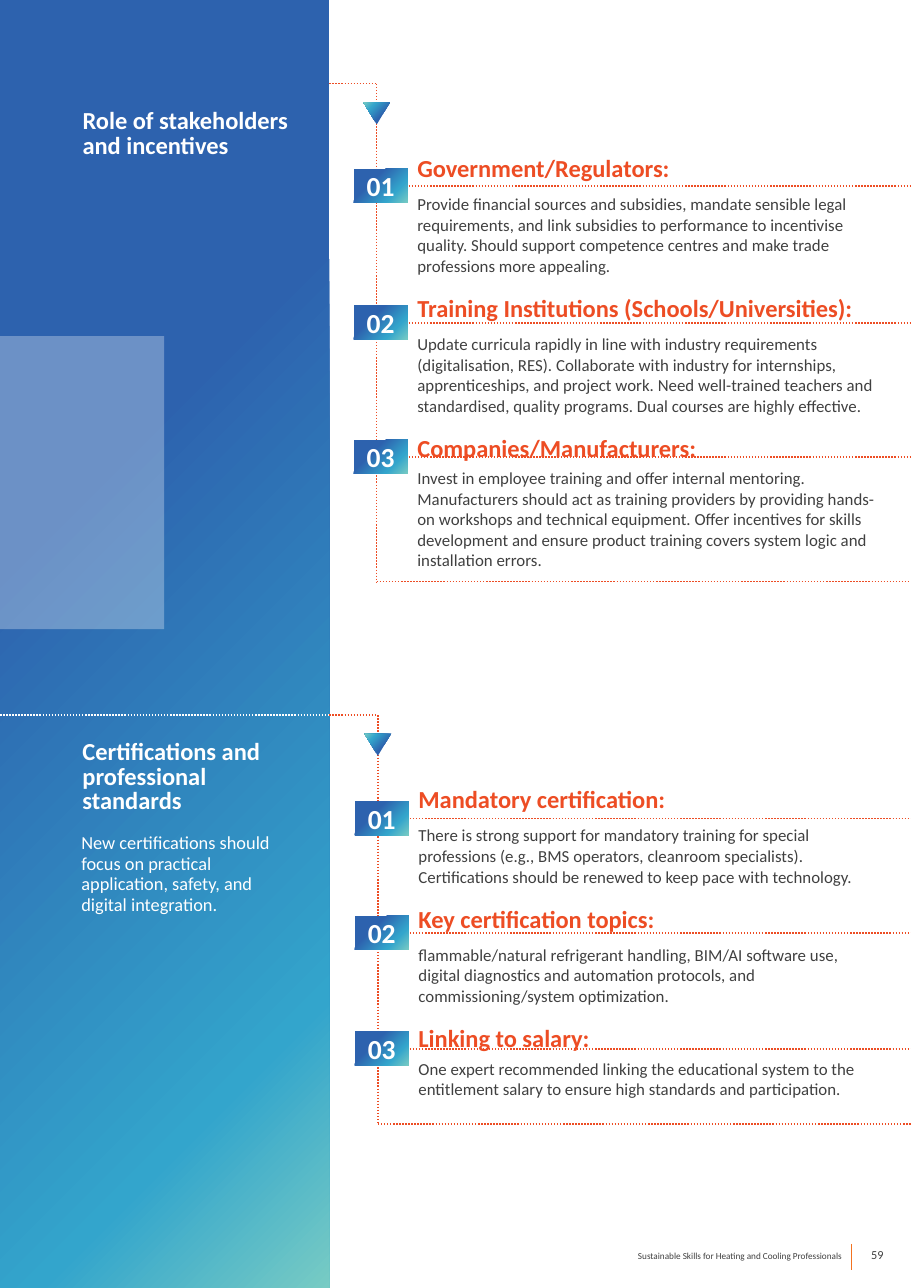
from copy import deepcopy

from pptx import Presentation
from pptx.dml.color import RGBColor
from pptx.enum.dml import MSO_LINE
from pptx.enum.shapes import MSO_CONNECTOR, MSO_SHAPE
from pptx.enum.text import MSO_ANCHOR, MSO_AUTO_SIZE, PP_ALIGN
from pptx.oxml.ns import qn
from pptx.oxml.xmlchemy import OxmlElement
from pptx.util import Pt

PX = 9144
PAGE_WIDTH, PAGE_HEIGHT = 827, 1169
SIDEBAR_WIDTH = 299
COLORS = {
    "blue": "2D62AE", "cyan": "33A5CC", "mint": "77CBC4", "white": "FFFFFF",
    "orange": "ED4D24", "amber": "F37321", "text": "404040",
}
SIDE_TITLE = {"size": 16, "bold": True, "color": "white", "line_spacing": Pt(16)}
SIDE_TEXT = {"size": 12, "color": "white", "line_spacing": Pt(13.4)}
HEADING = {"size": 16, "bold": True, "color": "orange", "line_spacing": Pt(13.4)}
BODY = {"size": 11, "color": "text", "line_spacing": Pt(13.4)}
BADGE = {"size": 18, "bold": True, "color": "white", "alignment": PP_ALIGN.CENTER}
FOOTER = {"size": 6, "color": "text", "alignment": PP_ALIGN.RIGHT}
NUMBER = {**FOOTER, "size": 8}

STAKEHOLDERS = [
    ("Government/Regulators:",
     "Provide financial sources and subsidies, mandate sensible legal requirements, "
     "and link subsidies to performance to incentivise quality. Should support "
     "competence centres and make trade professions more appealing."),
    ("Training Institutions (Schools/Universities):",
     "Update curricula rapidly in line with industry requirements (digitalisation, "
     "RES). Collaborate with industry for internships, apprenticeships, and project "
     "work. Need well-trained teachers and standardised, quality programs. Dual "
     "courses are highly effective."),
    ("Companies/Manufacturers:",
     "Invest in employee training and offer internal mentoring. Manufacturers should "
     "act as training providers by providing hands-on workshops and technical "
     "equipment. Offer incentives for skills development and ensure product training "
     "covers system logic and installation errors."),
]
CERTIFICATIONS = [
    ("Mandatory certification:",
     "There is strong support for mandatory training for special professions (e.g., "
     "BMS operators, cleanroom specialists). Certifications should be renewed to keep "
     "pace with technology."),
    ("Key certification topics:",
     "flammable/natural refrigerant handling, BIM/AI software use, digital diagnostics "
     "and automation protocols, and commissioning/system optimization."),
    ("Linking to salary:",
     "One expert recommended linking the educational system to the entitlement salary "
     "to ensure high standards and participation."),
]


def rgb(name):
    """Return the named colour."""
    return RGBColor.from_string(COLORS[name])


def scaled(*lengths):
    """Turn px into EMU."""
    return [length * PX for length in lengths]


def write(shape, paragraphs, anchor=MSO_ANCHOR.TOP):
    """Fill a shape with (text, format) paragraphs."""
    frame = shape.text_frame
    frame.word_wrap = True
    frame.auto_size = MSO_AUTO_SIZE.NONE
    frame.vertical_anchor = anchor
    for index, (text, style) in enumerate(paragraphs):
        para = frame.add_paragraph() if index else frame.paragraphs[0]
        values = {"alignment": PP_ALIGN.LEFT, **style}
        size, color = Pt(values.pop("size")), values.pop("color")
        span = para.add_run()
        span.text = text
        font = {"name": "Calibri", "size": size, "bold": values.pop("bold", False)}
        for name, value in font.items():
            setattr(span.font, name, value)
        span.font.color.rgb = rgb(color)
        for name, value in values.items():
            setattr(para, name, value)


def add_text(page, box, paragraphs, anchor=MSO_ANCHOR.TOP):
    """Add a text box."""
    write(page.shapes.add_textbox(*scaled(*box)), paragraphs, anchor)


def add_line(page, start, end, color="orange", width=1, dash=MSO_LINE.ROUND_DOT):
    """Add a straight line between two points."""
    line = page.shapes.add_connector(MSO_CONNECTOR.STRAIGHT, *scaled(*start, *end))
    line.line.color.rgb = rgb(color)
    for name, value in {"width": Pt(width), "dash_style": dash}.items():
        setattr(line.line, name, value)
    line.element.spPr.append(OxmlElement("a:effectLst"))


def add_gradient_shape(page, kind, box, middle=0.74):
    """Add a borderless shape with the diagonal blue to mint gradient."""
    shape = page.shapes.add_shape(kind, *scaled(*box))
    shape.shadow.inherit = False
    shape.line.fill.background()
    shape.fill.gradient()
    shape.fill.gradient_angle = 315
    stops = shape.element.spPr.find(".//" + qn("a:gsLst"))
    stops.append(deepcopy(stops[0]))
    ramp = zip(shape.fill.gradient_stops, (0.35, middle, 1), ("blue", "cyan", "mint"))
    for stop, position, color in ramp:
        stop.position = position
        stop.color.rgb = rgb(color)
    return shape


def build_sidebar(page, box):
    """Place the gradient sidebar, its emblem block and its texts."""
    left, top, width, height = box
    add_gradient_shape(page, MSO_SHAPE.RECTANGLE, box, 0.82)
    emblem = page.shapes.add_shape(
        MSO_SHAPE.RECTANGLE, *scaled(left, top + 305, width // 2, 266))
    emblem.shadow.inherit = False
    emblem.line.fill.background()
    emblem.fill.solid()
    emblem.fill.fore_color.rgb = rgb("white")
    alpha = OxmlElement("a:alpha")
    alpha.set("val", "30000")
    emblem.element.spPr.find(".//" + qn("a:srgbClr")).append(alpha)

    title = page.shapes.title
    title.element.getparent().append(title.element)
    title_box = scaled(left + 65, top + 95, 212, 78)
    for name, value in zip(("left", "top", "width", "height"), title_box):
        setattr(title, name, value)
    write(title, [("Role of stakeholders and incentives", SIDE_TITLE)])
    add_text(page, (left + 65, top + 668, 212, 78),
             [("Certifications and professional standards", SIDE_TITLE)])
    add_text(page, (left + 64, top + 751, 201, 101),
             [("New certifications should focus on practical application, safety, "
               "and digital integration.", SIDE_TEXT)])
    add_line(page, (left, top + 649), (left + width, top + 649), "white")


def build_timeline(page, box, entries, rules):
    """Place a dotted timeline with numbered entries; rules are offsets from the top."""
    axis, top, width, height = box
    right, bottom = axis + width, top + height
    add_line(page, (SIDEBAR_WIDTH, top), (axis, top))
    add_line(page, (axis, top), (axis, bottom))
    add_line(page, (axis, bottom), (right, bottom))
    arrow = add_gradient_shape(
        page, MSO_SHAPE.ISOSCELES_TRIANGLE, (axis - 12, top + 17, 24, 20))
    arrow.rotation = 180

    paragraphs = []
    for index, (heading, body) in enumerate(entries):
        last = index == len(entries) - 1
        gaps = {"space_before": Pt(17 if index else 0),
                "space_after": Pt(3.7 if last else 7.3)}
        paragraphs += [(heading, {**HEADING, **gaps}), (body, BODY)]
    add_text(page, (axis + 27, top + 66, 441, height - 74), paragraphs)

    for number, offset in enumerate(rules, 1):
        rule = top + offset
        add_line(page, (axis - 4, rule), (right, rule))
        badge = add_gradient_shape(
            page, MSO_SHAPE.RECTANGLE, (axis - 21, rule - 16, 49, 31))
        write(badge, [(f"{number:02}", BADGE)], MSO_ANCHOR.MIDDLE)


def build_footer(page, box):
    """Place the running title, divider and page number."""
    left, top, width, height = box
    divider = left + width - 39
    add_text(page, (left, top + 6, 532, 20),
             [("Sustainable Skills for Heating and Cooling Professionals", FOOTER)])
    add_line(page, (divider, top + 5), (divider, top + height - 1),
             "amber", 0.75, MSO_LINE.SOLID)
    add_text(page, (divider + 1, top, 38, height), [("59", NUMBER)], MSO_ANCHOR.MIDDLE)


def main():
    """Build and save the page."""
    deck = Presentation()
    deck.slide_width, deck.slide_height = scaled(PAGE_WIDTH, PAGE_HEIGHT)
    page = deck.slides.add_slide(deck.slide_layouts[5])
    build_sidebar(page, (0, 0, SIDEBAR_WIDTH, PAGE_HEIGHT))
    build_timeline(page, (342, 76, 485, 452), STAKEHOLDERS, (93, 217, 339))
    build_timeline(page, (343, 649, 484, 371), CERTIFICATIONS, (94, 198, 303))
    build_footer(page, (242, 1124, 570, 30))
    deck.save("out.pptx")


if __name__ == "__main__":
    main()
